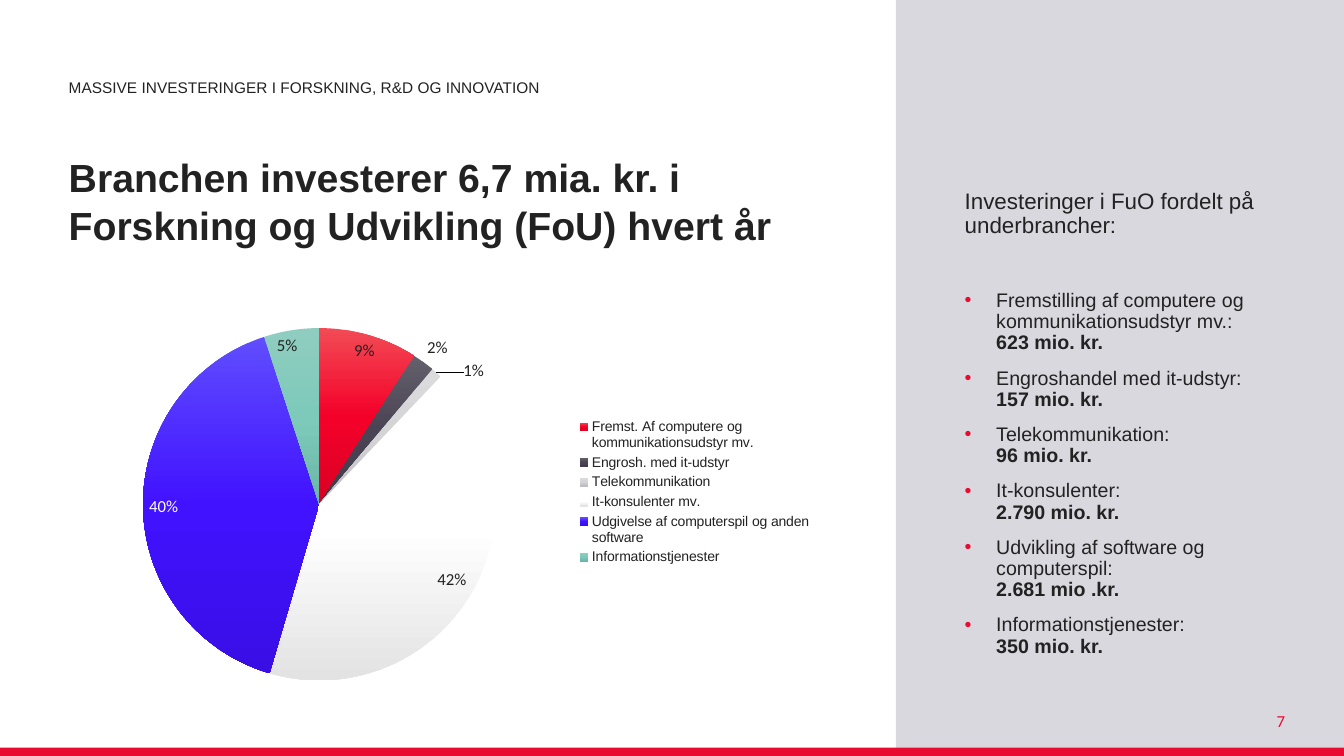
from dataclasses import dataclass
from lxml import etree
from pptx import Presentation
from pptx import util as u
from pptx.chart import data
from pptx.dml import color
from pptx.enum import chart as ch, shapes, text
from pptx.oxml import ns, parse_xml

Pt = u.Pt
INK, RED, GREY, WHITE = "222222", "E90C30", "DAD8DF", "FFFFFF"
INSIDE = ch.XL_LABEL_POSITION.INSIDE_END
OUTSIDE = ch.XL_LABEL_POSITION.OUTSIDE_END


@dataclass
class Box:
    left: float
    top: float
    width: float
    height: float

    def lengths(self) -> list:
        return [Pt(v) for v in (self.left, self.top, self.width, self.height)]


@dataclass
class Slice:
    name: str
    value: int
    stops: tuple
    place: object = INSIDE
    ink: str = INK
    shift: tuple = ()


@dataclass
class Item:
    label: str
    amount: str


SLICES = [
    Slice("Fremst. Af computere og kommunikationsudstyr mv.", 9, ("F24B55", "F40129", "DA0023"), shift=(0.01, 0)),
    Slice("Engrosh. med it-udstyr", 2, ("64606B", "4A4354", "413B4B"), OUTSIDE),
    Slice("Telekommunikation", 1, ("DBDADD", "D4D3D6", "BCBBBF"), OUTSIDE, shift=(0.03, 0.03)),
    Slice("It-konsulenter mv.", 42, ("FFFFFF", "FFFFFF", "E3E3E3")),
    Slice("Udgivelse af computerspil og anden software", 40, ("604DFE", "4112FF", "380EE5"), ink=WHITE),
    Slice("Informationstjenester", 5, ("8FCDC0", "7DC9BA", "6AB7A8"), shift=(-0.02, 0)),
]
ITEMS = [
    Item("Fremstilling af computere og kommunikationsudstyr mv.:", "623 mio. kr."),
    Item("Engroshandel med it-udstyr:", "157 mio. kr."),
    Item("Telekommunikation:", "96 mio. kr."),
    Item("It-konsulenter:", "2.790 mio. kr."),
    Item("Udvikling af software og computerspil:", "2.681 mio .kr."),
    Item("Informationstjenester:", "350 mio. kr."),
]


def rgb(code: str) -> color.RGBColor:
    return color.RGBColor.from_string(code)


def style(font, size: float, ink: str = INK, face: str = "Arial", bold: bool = False) -> None:
    font.size, font.name, font.bold = Pt(size), face, bold
    font.color.rgb = rgb(ink)


def add_run(para, words: str, size: float, **look) -> None:
    run = para.add_run()
    run.text = words
    style(run.font, size, **look)


def add_rect(slide, box: Box, fill: str) -> None:
    rect = slide.shapes.add_shape(shapes.MSO_SHAPE.RECTANGLE, *box.lengths())
    rect.shadow.inherit = False
    rect.fill.solid()
    rect.fill.fore_color.rgb = rgb(fill)
    rect.line.fill.background()


def add_frame(slide, box: Box, anchor=text.MSO_ANCHOR.TOP):
    frame = slide.shapes.add_textbox(*box.lengths()).text_frame
    frame.word_wrap = True
    frame.vertical_anchor = anchor
    return frame


def add_bullet(para) -> None:
    props = para._p.get_or_add_pPr()
    props.set("marL", str(Pt(22.5)))
    props.set("indent", str(Pt(-22.5)))
    tint = etree.SubElement(props, ns.qn("a:buClr"))
    etree.SubElement(tint, ns.qn("a:srgbClr"), val=RED)
    etree.SubElement(props, ns.qn("a:buFont"), typeface="Arial")
    etree.SubElement(props, ns.qn("a:buChar"), char="•")


def add_list(slide, box: Box) -> None:
    frame = add_frame(slide, box)
    head = frame.paragraphs[0]
    head.line_spacing = 0.9
    add_run(head, "Investeringer i FuO fordelt på underbrancher:", 16)
    for rank, item in enumerate(ITEMS):
        para = frame.add_paragraph()
        add_bullet(para)
        para.line_spacing = 0.9
        para.space_before = Pt(10 if rank else 37)
        add_run(para, item.label, 14)
        para.add_line_break()
        add_run(para, item.amount, 14, bold=True)


def set_layout(parent, index: int, area: tuple, modes: tuple = ()) -> None:
    for old in parent.findall(ns.qn("c:layout")):
        parent.remove(old)
    layout = parse_xml(f'<c:layout {ns.nsdecls("c")}><c:manualLayout/></c:layout>')
    for tag, value in (*modes, *zip("xywh", area)):
        etree.SubElement(layout[0], ns.qn(f"c:{tag}"), val=str(value))
    parent.insert(index, layout)


def shade(fill, grad, stops: tuple) -> None:
    fill.gradient_angle = 270
    marks = grad.find(ns.qn("a:gsLst"))
    for mark in list(marks):
        marks.remove(mark)
    for step, code in enumerate(stops):
        mark = etree.SubElement(marks, ns.qn("a:gs"), pos=str(step * 50000))
        etree.SubElement(mark, ns.qn("a:srgbClr"), val=code)


def set_labels(series) -> None:
    for rank, part in enumerate(SLICES):
        label = series.points[rank].data_label
        style(label.font, 12, part.ink, "Calibri")
        label.position = part.place
    group = series._element.find(ns.qn("c:dLbls"))
    nodes = group.findall(ns.qn("c:dLbl"))
    for node in (group, *nodes):
        for tag, flag in (("showVal", "0"), ("showPercent", "1")):
            node.find(ns.qn(f"c:{tag}")).set("val", flag)
    for node, part in zip(nodes, SLICES):
        if part.shift:
            set_layout(node, 1, part.shift)
    lead = group.find(ns.qn("c:showLeaderLines"))
    if lead is None:
        lead = etree.SubElement(group, ns.qn("c:showLeaderLines"))
    lead.set("val", "1")


def add_pie(slide, box: Box) -> None:
    table = data.CategoryChartData(number_format="0.0")
    table.categories = [part.name for part in SLICES]
    table.add_series("Series 1", [part.value for part in SLICES])
    chart = slide.shapes.add_chart(ch.XL_CHART_TYPE.PIE, *box.lengths(), table).chart
    chart.has_title = False
    style(chart.font, 10, face="Calibri")
    chart.has_legend = True
    legend = chart.legend
    legend.position = ch.XL_LEGEND_POSITION.RIGHT
    legend.include_in_layout = False
    style(legend.font, 10)
    plot = chart.plots[0]
    plot.vary_by_categories = True
    series = plot.series[0]
    for rank, part in enumerate(SLICES):
        form = series.points[rank].format
        form.fill.gradient()
        grad = series._element.findall(".//" + ns.qn("a:gradFill"))[-1]
        shade(form.fill, grad, part.stops)
        form.line.fill.background()
    set_labels(series)
    root = chart.element
    edge = (("xMode", "edge"), ("yMode", "edge"))
    inner = (("layoutTarget", "inner"), *edge)
    set_layout(root.find(".//" + ns.qn("c:plotArea")), 0, (0.11, 0.09, 0.46, 0.88), inner)
    set_layout(root.find(".//" + ns.qn("c:legend")), 1, (0.67, 0.31, 0.32, 0.38), edge)


def main() -> None:
    deck = Presentation()
    deck.slide_width, deck.slide_height = Pt(960), Pt(540)
    slide = deck.slides.add_slide(deck.slide_layouts[6])
    add_rect(slide, Box(640, 0, 320, 540), GREY)
    add_rect(slide, Box(0, 534, 960, 7), RED)

    title = add_frame(slide, Box(42, 103.5, 547, 80), text.MSO_ANCHOR.MIDDLE).paragraphs[0]
    add_run(title, "Branchen investerer 6,7 mia. kr. i Forskning og Udvikling (FoU) hvert år", 28, bold=True)

    add_list(slide, Box(682, 132.5, 248, 368))

    page = add_frame(slide, Box(702, 500.5, 216, 29), text.MSO_ANCHOR.MIDDLE)
    page.margin_right = 0
    page.paragraphs[0].alignment = text.PP_ALIGN.RIGHT
    add_run(page.paragraphs[0], "7", 12, ink=RED, face="Calibri")

    topic = add_frame(slide, Box(42, 51, 547, 21.5), text.MSO_ANCHOR.BOTTOM).paragraphs[0]
    topic.line_spacing = 0.9
    add_run(topic, "MASSIVE INVESTERINGER I FORSKNING, R&D OG INNOVATION", 11)

    add_pie(slide, Box(42, 206.5, 547, 290))
    deck.save("out.pptx")


if __name__ == "__main__":
    main()
